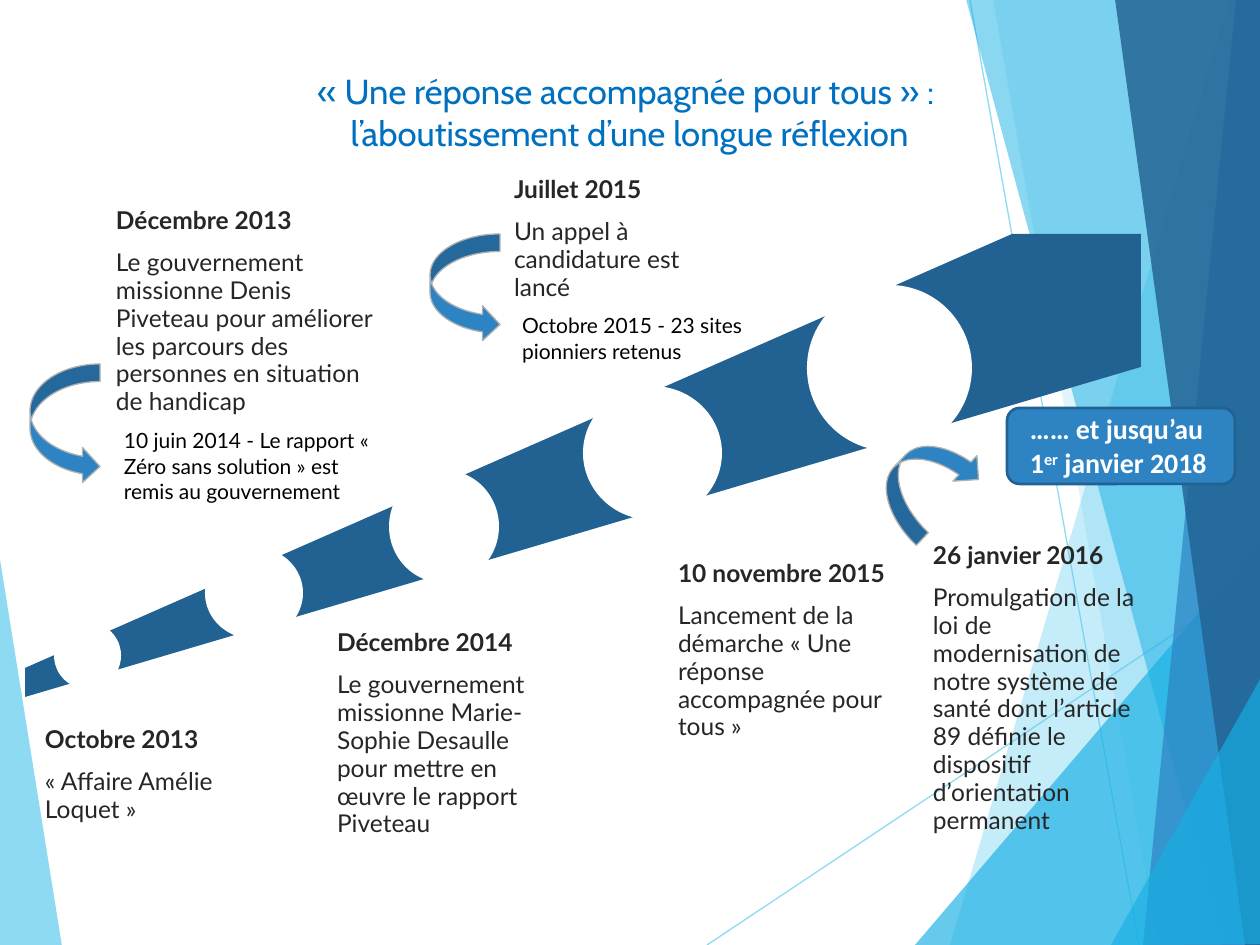
"""Builds the timeline slide on the path to « Une réponse accompagnée pour tous »."""
from typing import NamedTuple

from lxml import etree
from pptx import Presentation
from pptx.dml.color import RGBColor
from pptx.enum.shapes import MSO_CONNECTOR, MSO_SHAPE
from pptx.enum.text import MSO_ANCHOR, PP_ALIGN
from pptx.oxml.ns import qn
from pptx.util import Pt

PX = 914400 / 126
WIDTH, HEIGHT = 1260, 945

SKY = RGBColor(0x5F, 0xCB, 0xEF)
CYAN = RGBColor(0x17, 0xB0, 0xE4)
BLUE = RGBColor(0x2E, 0x83, 0xC3)
NAVY = RGBColor(0x22, 0x62, 0x92)
TITLE_BLUE = RGBColor(0x00, 0x70, 0xC0)
INK = RGBColor(0x26, 0x26, 0x26)
BLACK = RGBColor(0x00, 0x00, 0x00)
GREY = RGBColor(0xB0, 0xB0, 0xB0)
WHITE = RGBColor(0xFF, 0xFF, 0xFF)

ELLIPSE = MSO_SHAPE.OVAL
CURVED_ARROW = MSO_SHAPE.CURVED_RIGHT_ARROW
ROUNDED = MSO_SHAPE.ROUNDED_RECTANGLE
STRAIGHT = MSO_CONNECTOR.STRAIGHT
TOP, BOTTOM = MSO_ANCHOR.TOP, MSO_ANCHOR.BOTTOM
LEFT, CENTER = PP_ALIGN.LEFT, PP_ALIGN.CENTER


class Box(NamedTuple):
    left: int
    top: int
    width: int
    height: int


class Facet(NamedTuple):
    points: list[tuple[int, int]]
    color: RGBColor
    opacity: int = 100


class Milestone(NamedTuple):
    box: Box
    date: str
    event: str
    anchor: MSO_ANCHOR = TOP


class Arrow(NamedTuple):
    box: Box
    rotation: float = 0
    flipped: bool = False


LEFT_FACET = Facet([(-1, 553), (62, 946), (-1, 945)], SKY, 70)
RAYS = [((707, 945), (1261, 576)), ((970, 0), (1139, 945))]
RIGHT_FACETS = [
    Facet([(1229, 0), (950, 945), (1263, 946), (1261, 1)], SKY, 36),
    Facet([(993, -1), (1158, 945), (1261, 945), (1261, -1)], SKY, 20),
    Facet([(915, 945), (1260, 541), (1261, 945)], CYAN, 66),
    Facet([(966, -1), (1222, 945), (1261, 944), (1261, -1)], CYAN, 50),
    Facet([(1236, -1), (1143, 945), (1261, 945), (1260, -1)], BLUE, 70),
    Facet([(1115, -1), (1245, 945), (1263, 945), (1260, -1)], NAVY, 82),
    Facet([(1111, 945), (1263, 674), (1263, 944)], CYAN, 66),
]
ROAD = Facet([(25, 697), (25, 668), (1012, 234), (1141, 234), (1141, 367)], NAVY)
GAPS = [
    Box(54, 622, 67, 67),
    Box(205, 547, 98, 92),
    Box(389, 470, 110, 113),
    Box(583, 386, 139, 134),
    Box(807, 285, 165, 166),
]
MILESTONES = [
    Milestone(Box(40, 721, 193, 117), "Octobre 2013", "« Affaire Amélie Loquet »"),
    Milestone(Box(111, 202, 277, 202), "Décembre 2013",
              "Le gouvernement missionne Denis Piveteau pour améliorer les "
              "parcours des personnes en situation de handicap"),
    Milestone(Box(332, 624, 233, 218), "Décembre 2014",
              "Le gouvernement missionne Marie-Sophie Desaulle pour mettre en "
              "œuvre le rapport Piveteau"),
    Milestone(Box(509, 176, 205, 131), "Juillet 2015",
              "Un appel à candidature est lancé", BOTTOM),
    Milestone(Box(673, 555, 218, 238), "10 novembre 2015",
              "Lancement de la démarche « Une réponse accompagnée pour tous »"),
    Milestone(Box(928, 537, 213, 305), "26 janvier 2016",
              "Promulgation de la loi de modernisation de notre système de santé "
              "dont l’article 89 définie le dispositif d’orientation permanent"),
]
FOLLOW_UPS = [
    (Box(111, 422, 277, 89),
     "10 juin 2014 - Le rapport « Zéro sans solution » est remis au gouvernement"),
    (Box(509, 307, 258, 63), "Octobre 2015 - 23 sites pionniers retenus"),
]
ARROWS = [
    Arrow(Box(30, 364, 70, 120)),
    Arrow(Box(430, 234, 70, 108)),
    Arrow(Box(893, 428, 70, 108), 43.4, True),
]


def emu(*lengths: int) -> list[int]:
    return [round(length * PX) for length in lengths]


def set_opacity(shape, percent: int) -> None:
    for color in shape._element.spPr.iter(qn("a:srgbClr")):
        etree.SubElement(color, qn("a:alpha")).set("val", str(percent * 1000))


def paint(shape, fill: RGBColor, line: RGBColor | None = None, weight: float = 0.75) -> None:
    shape.shadow.inherit = False
    shape.fill.solid()
    shape.fill.fore_color.rgb = fill
    if line is None:
        shape.line.fill.background()
    else:
        shape.line.color.rgb = line
        shape.line.width = Pt(weight)


def draw_facet(page, facet: Facet) -> None:
    start, *rest = facet.points
    builder = page.shapes.build_freeform(*start, scale=PX)
    builder.add_line_segments(rest, close=True)
    shape = builder.convert_to_shape()
    paint(shape, facet.color)
    if facet.opacity < 100:
        set_opacity(shape, facet.opacity)


def draw_ray(page, start: tuple[int, int], end: tuple[int, int]) -> None:
    ray = page.shapes.add_connector(STRAIGHT, *emu(*start, *end))
    ray.line.color.rgb = SKY
    ray.line.width = Pt(0.75)
    set_opacity(ray, 70)
    etree.SubElement(ray._element.spPr, qn("a:effectLst"))


def draw_shape(page, kind: MSO_SHAPE, box: Box, fill: RGBColor, **outline):
    shape = page.shapes.add_shape(kind, *emu(*box))
    paint(shape, fill, **outline)
    return shape


def draw_arrow(page, arrow: Arrow) -> None:
    shape = draw_shape(page, CURVED_ARROW, arrow.box, BLUE, line=GREY)
    shape.rotation = arrow.rotation
    if arrow.flipped:
        shape._element.spPr.xfrm.set("flipV", "1")


def add_frame(page, box: Box, inset: tuple[int, int] = (13, 6), anchor: MSO_ANCHOR = TOP):
    frame = page.shapes.add_textbox(*emu(*box)).text_frame
    frame.word_wrap = True
    frame.vertical_anchor = anchor
    frame.margin_left = frame.margin_right = emu(inset[0])[0]
    frame.margin_top = frame.margin_bottom = emu(inset[1])[0]
    return frame


def add_span(para, text: str, *, size: float, color: RGBColor, font: str = "Lato",
             bold: bool = False, raised: bool = False) -> None:
    span = para.add_run()
    span.text = text
    span.font.name = font
    span.font.size = Pt(size)
    span.font.bold = bold
    span.font.color.rgb = color
    if raised:
        span.font._element.set("baseline", "30000")


def draw_title(page) -> None:
    para = add_frame(page, Box(63, 64, 1133, 82)).paragraphs[0]
    para.alignment = CENTER
    style = dict(size=19.8, color=TITLE_BLUE, font="Cabin")
    add_span(para, "« Une réponse accompagnée pour tous » : ", **style)
    para.add_line_break()
    add_span(para, "l’aboutissement d’une longue réflexion", **style)


def draw_milestone(page, milestone: Milestone) -> None:
    frame = add_frame(page, milestone.box, (5, 5), milestone.anchor)
    paras = frame.paragraphs[0], frame.add_paragraph()
    for para, text, bold in zip(paras, (milestone.date, milestone.event), (True, False)):
        para.alignment = LEFT
        para.line_spacing = 0.95
        para.space_after = Pt(8)
        add_span(para, text, size=14, color=INK, bold=bold)


def draw_callout(page) -> None:
    draw_shape(page, ROUNDED, Box(1007, 408, 228, 76), BLUE, line=NAVY, weight=1.5)
    frame = add_frame(page, Box(1017, 406, 209, 81))
    style = dict(size=16, color=WHITE, font="Calibri", bold=True)
    add_span(frame.paragraphs[0], "…… et jusqu’au", **style)
    para = frame.add_paragraph()
    for text, raised in (("1", False), ("er", True), (" janvier 2018", False)):
        add_span(para, text, raised=raised, **style)


def main() -> None:
    deck = Presentation()
    deck.slide_width, deck.slide_height = emu(WIDTH, HEIGHT)
    page = deck.slides.add_slide(deck.slide_layouts[6])
    draw_facet(page, LEFT_FACET)
    for start, end in RAYS:
        draw_ray(page, start, end)
    for facet in [*RIGHT_FACETS, ROAD]:
        draw_facet(page, facet)
    draw_title(page)
    for gap in GAPS:
        draw_shape(page, ELLIPSE, gap, WHITE)
    for milestone in MILESTONES:
        draw_milestone(page, milestone)
    for box, text in FOLLOW_UPS:
        add_span(add_frame(page, box).paragraphs[0], text, size=12, color=BLACK)
    draw_callout(page)
    for arrow in ARROWS:
        draw_arrow(page, arrow)
    deck.save("out.pptx")


if __name__ == "__main__":
    main()
